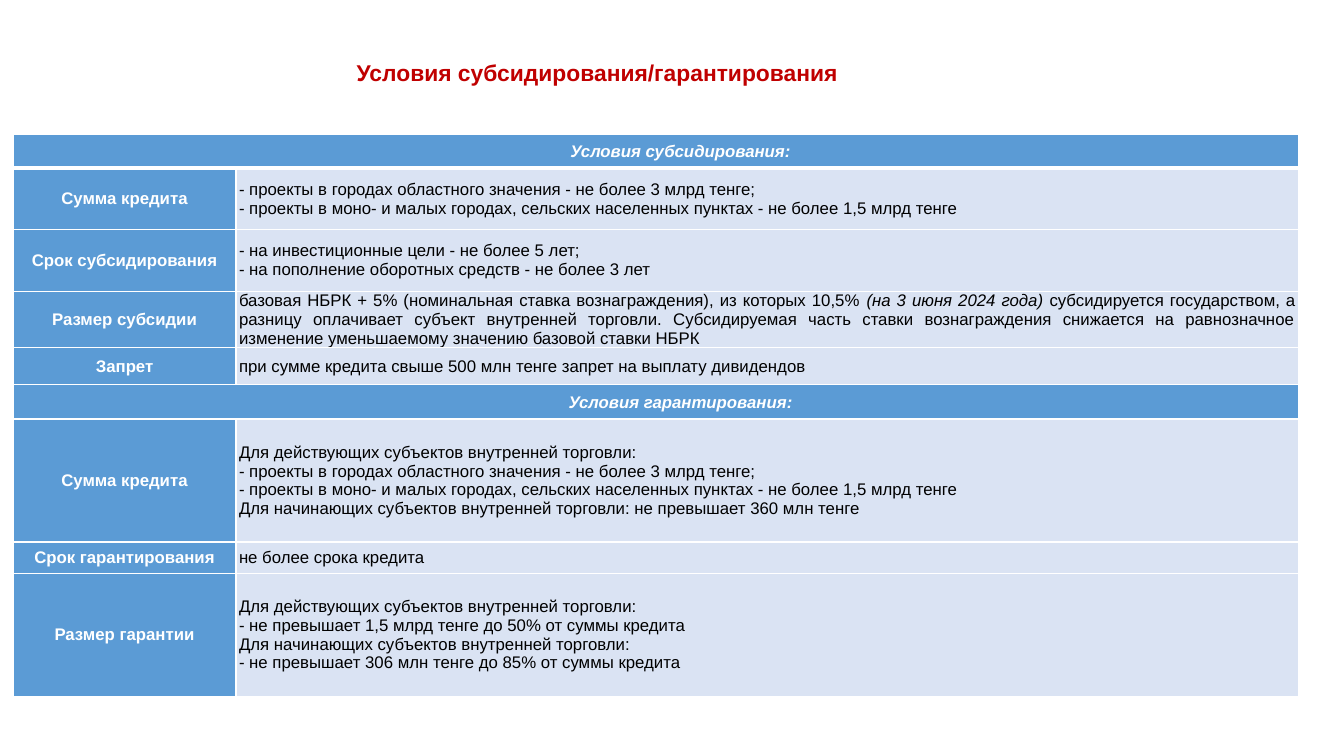
from dataclasses import dataclass
from typing import Optional

import pptx
import pptx.dml.color
import pptx.enum.text
import pptx.oxml
import pptx.oxml.ns
import pptx.util
from pptx.enum.text import MSO_ANCHOR, PP_ALIGN


@dataclass(frozen=True)
class Theme:
    font: str = "Arial"
    title_size: float = 16.3
    table_size: float = 12
    title: str = "C00000"
    heading_fill: str = "5B9BD5"
    heading_text: str = "FFFFFF"
    details_fill: str = "DAE3F3"
    details_text: str = "000000"
    border: str = "FFFFFF"
    border_width: float = 1
    header_rule_width: float = 3


@dataclass(frozen=True)
class Run:
    text: str
    italic: bool = False


@dataclass(frozen=True)
class Condition:
    """A table row; one without details is a section heading."""
    name: str
    height: float
    details: tuple[tuple[Run, ...], ...] = ()


THEME = Theme()
SLIDE_WIDTH = pptx.util.Inches(13.33)
SLIDE_HEIGHT = pptx.util.Inches(7.5)


# Lengths are percentages of the slide's width and height
def across(share: float) -> int:
    return round(SLIDE_WIDTH * share / 100)


def down(share: float) -> int:
    return round(SLIDE_HEIGHT * share / 100)


def lines(*texts: str) -> tuple[tuple[Run, ...], ...]:
    return tuple((Run(text),) for text in texts)


TITLE_AREA = (across(13.58), down(5.47), across(61.74), down(8.27))
TABLE_LEFT, TABLE_TOP = across(0.98), down(17.73)
COLUMN_SHARES = (16.58, 79.07)
SECTION, PAIR, QUARTET = 4.53, 8.13, 16.27
ACTIVE = "Для действующих субъектов внутренней торговли:"
STARTING = "Для начинающих субъектов внутренней торговли:"
CREDIT_LIMITS = (
    "- проекты в городах областного значения - не более 3 млрд тенге;",
    "- проекты в моно- и малых городах, сельских населенных пунктах - не более 1,5 млрд тенге",
)

CONDITIONS = (
    Condition("Условия субсидирования:", SECTION),
    Condition("Сумма кредита", PAIR, lines(*CREDIT_LIMITS)),
    Condition("Срок субсидирования", PAIR, lines(
        "- на инвестиционные цели - не более 5 лет;",
        "- на пополнение оборотных средств - не более 3 лет")),
    Condition("Размер субсидии", 7.47, ((
        Run("базовая НБРК + 5% (номинальная ставка вознаграждения), из которых 10,5% "),
        Run("(на 3 июня 2024 года) ", italic=True),
        Run("субсидируется государством, а разницу оплачивает субъект внутренней торговли. "
            "Субсидируемая часть ставки вознаграждения снижается на равнозначное изменение "
            "уменьшаемому значению базовой ставки НБРК")),)),
    Condition("Запрет", 4.93, lines(
        "при сумме кредита свыше 500 млн тенге запрет на выплату дивидендов")),
    Condition("Условия гарантирования:", SECTION),
    Condition("Сумма кредита", QUARTET, lines(
        ACTIVE, *CREDIT_LIMITS, f"{STARTING} не превышает 360 млн тенге")),
    Condition("Срок гарантирования", 4.13, lines("не более срока кредита")),
    Condition("Размер гарантии", QUARTET, lines(
        ACTIVE, "- не превышает 1,5 млрд тенге до 50% от суммы кредита",
        STARTING, "- не превышает 306 млн тенге до 85% от суммы кредита")),
)


def set_font(font, size: float, color: str, bold: bool, italic: Optional[bool] = False) -> None:
    font.name = THEME.font
    font.size = pptx.util.Pt(size)
    font.bold = bold
    font.italic = italic
    font.color.rgb = pptx.dml.color.RGBColor.from_string(color)


def set_borders(cell, top: float, bottom: float) -> None:
    properties = cell._tc.get_or_add_tcPr()
    widths = {"L": THEME.border_width, "R": THEME.border_width, "T": top, "B": bottom}
    for side, width in widths.items():
        properties.append(pptx.oxml.parse_xml(
            f'<a:ln{side} {pptx.oxml.ns.nsdecls("a")} w="{pptx.util.Pt(width)}">'
            f'<a:solidFill><a:srgbClr val="{THEME.border}"/></a:solidFill></a:ln{side}>'))


def format_cell(cell, fill: str, row: int) -> None:
    set_borders(cell,
                THEME.header_rule_width if row == 1 else THEME.border_width,
                THEME.header_rule_width if row == 0 else THEME.border_width)
    cell.fill.solid()
    cell.fill.fore_color.rgb = pptx.dml.color.RGBColor.from_string(fill)
    cell.vertical_anchor = MSO_ANCHOR.MIDDLE
    cell.margin_left = cell.margin_right = pptx.util.Inches(0.03)
    cell.margin_top = cell.margin_bottom = 0


def write_name(cell, condition: Condition) -> None:
    name = cell.text_frame.paragraphs[0]
    name.text = condition.name
    name.alignment = PP_ALIGN.CENTER
    is_section = not condition.details
    if is_section:
        name.line_spacing = 1.07
        name._p.get_or_add_pPr().set("indent", str(pptx.util.Inches(0.49)))
    set_font(name.font, THEME.table_size, THEME.heading_text, bold=True, italic=is_section)


def write_details(cell, details: tuple[tuple[Run, ...], ...]) -> None:
    for index, runs in enumerate(details):
        detail = cell.text_frame.add_paragraph() if index else cell.text_frame.paragraphs[0]
        detail.alignment = PP_ALIGN.JUSTIFY
        set_font(detail.font, THEME.table_size, THEME.details_text, bold=False)
        for part in runs:
            phrase = detail.add_run()
            phrase.text = part.text
            if part.italic:
                phrase.font.italic = True


def add_title(slide, text: str) -> None:
    title = slide.shapes.title
    title.left, title.top, title.width, title.height = TITLE_AREA
    frame = title.text_frame
    frame.word_wrap = True
    frame.auto_size = pptx.enum.text.MSO_AUTO_SIZE.NONE
    frame.vertical_anchor = MSO_ANCHOR.MIDDLE
    frame.margin_left = frame.margin_right = frame.margin_top = frame.margin_bottom = 0
    heading = frame.paragraphs[0]
    heading.text = text
    heading.alignment = PP_ALIGN.CENTER
    set_font(heading.font, THEME.title_size, THEME.title, bold=True)


def add_conditions(slide, conditions: tuple[Condition, ...]) -> None:
    table = slide.shapes.add_table(
        len(conditions), len(COLUMN_SHARES), TABLE_LEFT, TABLE_TOP,
        across(sum(COLUMN_SHARES)), down(sum(c.height for c in conditions))).table
    for column, share in zip(table.columns, COLUMN_SHARES):
        column.width = across(share)
    for row, condition in enumerate(conditions):
        table.rows[row].height = down(condition.height)
        name_cell, details_cell = table.cell(row, 0), table.cell(row, 1)
        format_cell(name_cell, THEME.heading_fill, row)
        write_name(name_cell, condition)
        if condition.details:
            format_cell(details_cell, THEME.details_fill, row)
            write_details(details_cell, condition.details)
        else:
            format_cell(details_cell, THEME.heading_fill, row)
            name_cell.merge(details_cell)


def main() -> None:
    presentation = pptx.Presentation()
    presentation.slide_width = SLIDE_WIDTH
    presentation.slide_height = SLIDE_HEIGHT
    title_only = presentation.slide_layouts[5]
    slide = presentation.slides.add_slide(title_only)

    # Title
    add_title(slide, "Условия субсидирования/гарантирования")
    # Subsidy and guarantee conditions
    add_conditions(slide, CONDITIONS)

    presentation.save("out.pptx")


if __name__ == "__main__":
    main()
